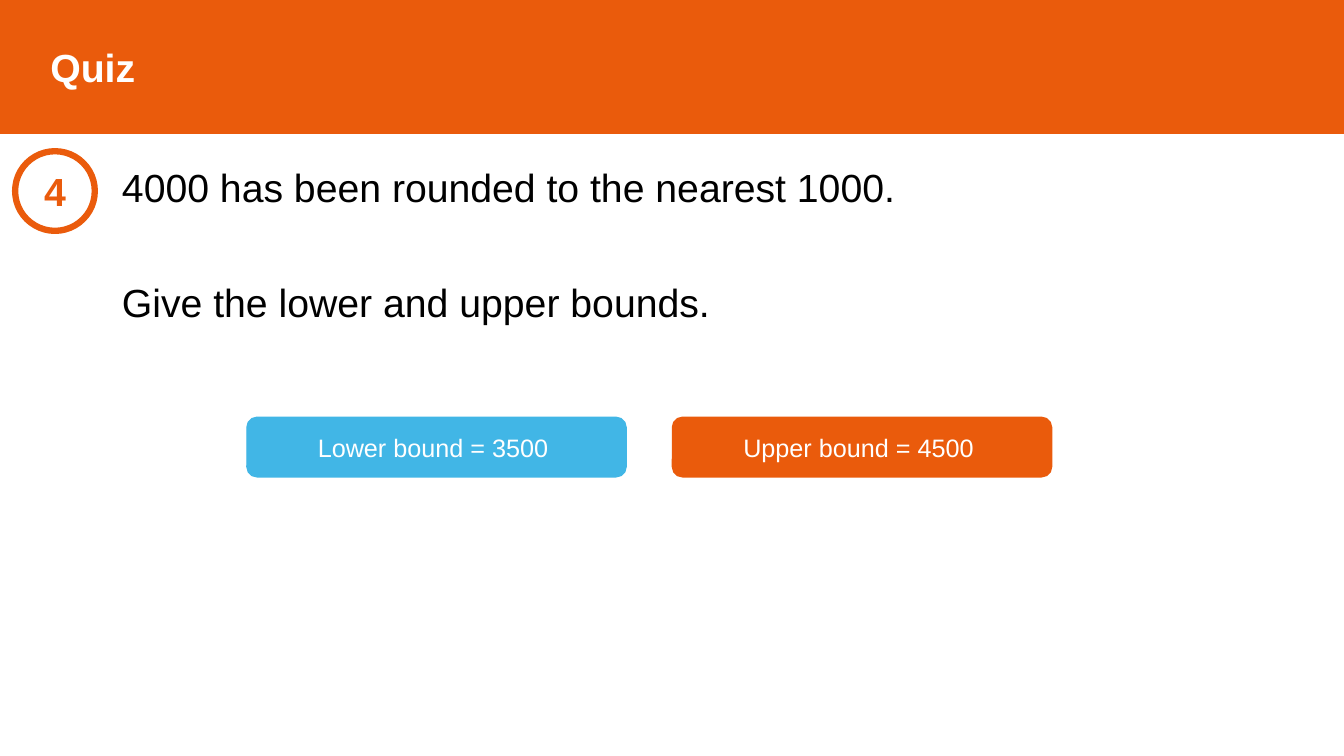
from dataclasses import dataclass

from lxml import etree
from pptx import Presentation
from pptx.dml.color import RGBColor
from pptx.enum.shapes import MSO_SHAPE
from pptx.enum.text import MSO_ANCHOR, MSO_AUTO_SIZE, PP_ALIGN
from pptx.oxml.ns import qn
from pptx.util import Inches, Pt

OVAL = MSO_SHAPE.OVAL
ROUNDED = MSO_SHAPE.ROUNDED_RECTANGLE
MIDDLE, TOP = MSO_ANCHOR.MIDDLE, MSO_ANCHOR.TOP
LEFT, CENTER = PP_ALIGN.LEFT, PP_ALIGN.CENTER
NO_AUTOFIT = MSO_AUTO_SIZE.NONE


@dataclass(frozen=True)
class Theme:
    """Colours, font and type sizes of the quiz."""
    orange: RGBColor = RGBColor(0xEA, 0x5B, 0x0C)
    blue: RGBColor = RGBColor(0x41, 0xB6, 0xE6)
    white: RGBColor = RGBColor(0xFF, 0xFF, 0xFF)
    black: RGBColor = RGBColor(0, 0, 0)
    font: str = "Arial"
    large: int = 28
    small: int = 18


THEME = Theme()


def place(shape, box):
    """Move a shape to a box of left, top, width and height in inches."""
    shape.left, shape.top, shape.width, shape.height = map(Inches, box)


def write(paragraph, text, *, size, color, bold=False, align=LEFT, before=0, spacing=1.0):
    """Write formatted text into a paragraph."""
    paragraph.alignment = align
    paragraph.space_before = Pt(before)
    paragraph.line_spacing = spacing
    run = paragraph.add_run()
    run.text = text
    run.font.name = THEME.font
    run.font.size = Pt(size)
    run.font.bold = bold
    run.font.color.rgb = color


def outline(shape, color, width):
    """Give a shape a plain outline."""
    shape.line.color.rgb = color
    shape.line.width = Pt(width)


def fill(shape, color):
    """Fill a shape and outline it in the same colour."""
    shape.fill.solid()
    shape.fill.fore_color.rgb = color
    outline(shape, color, 1)


def add_banner(slide, box, text):
    """Turn the title placeholder into the coloured banner."""
    title = slide.shapes.title
    place(title, box)
    fill(title, THEME.orange)
    frame = title.text_frame
    frame.auto_size = NO_AUTOFIT
    frame.vertical_anchor = MIDDLE
    frame.margin_left = Inches(0.5)
    write(frame.paragraphs[0], text, size=THEME.large, color=THEME.white, bold=True)


def add_question(slide, box, lines):
    """Set the question lines in the body placeholder without bullets."""
    body = slide.placeholders[1]
    place(body, box)
    frame = body.text_frame
    frame.auto_size = NO_AUTOFIT
    frame.vertical_anchor = TOP
    for index, line in enumerate(lines):
        paragraph = frame.add_paragraph() if index else frame.paragraphs[0]
        write(paragraph, line, size=THEME.large, color=THEME.black,
              before=52 if index else 10, spacing=0.9)
        properties = paragraph._p.get_or_add_pPr()
        properties.set("marL", "0")
        properties.set("indent", "0")
        etree.SubElement(properties, qn("a:buNone"))


def add_label(slide, kind, box, text, **text_format):
    """Add a preset shape with centred text."""
    shape = slide.shapes.add_shape(kind, *map(Inches, box))
    shape.shadow.inherit = False
    frame = shape.text_frame
    frame.word_wrap = True
    frame.vertical_anchor = MIDDLE
    write(frame.paragraphs[0], text, align=CENTER, **text_format)
    return shape


def add_number(slide, box, number):
    """Add the ringed question number."""
    ring = add_label(slide, OVAL, box, number, size=THEME.large,
                     color=THEME.orange, bold=True)
    ring.fill.background()
    outline(ring, THEME.orange, 4.5)


def add_answers(slide, box, answers):
    """Place the answer buttons side by side, evenly across the box."""
    left, top, width, height = box
    button_width = 3.76
    step = (width - button_width) / (len(answers) - 1)
    for index, (text, color) in enumerate(answers):
        button_box = (left + index * step, top, button_width, height)
        button = add_label(slide, ROUNDED, button_box, text,
                           size=THEME.small, color=THEME.white)
        fill(button, color)


def main():
    """Build the quiz slide and save it."""
    presentation = Presentation()
    presentation.slide_width = Inches(13.33)
    presentation.slide_height = Inches(7.5)
    slide = presentation.slides.add_slide(presentation.slide_layouts[1])
    add_banner(slide, (0, 0, 13.33, 1.32), "Quiz")
    add_question(slide, (1.11, 1.62, 11.5, 1.72), [
        "4000 has been rounded to the nearest 1000.",
        "Give the lower and upper bounds.",
    ])
    add_number(slide, (0.15, 1.5, 0.79, 0.79), "4")
    add_answers(slide, (2.45, 4.14, 7.98, 0.59), [
        ("Lower bound = 3500 ", THEME.blue),
        ("Upper bound = 4500 ", THEME.orange),
    ])
    presentation.save("out.pptx")


if __name__ == "__main__":
    main()
